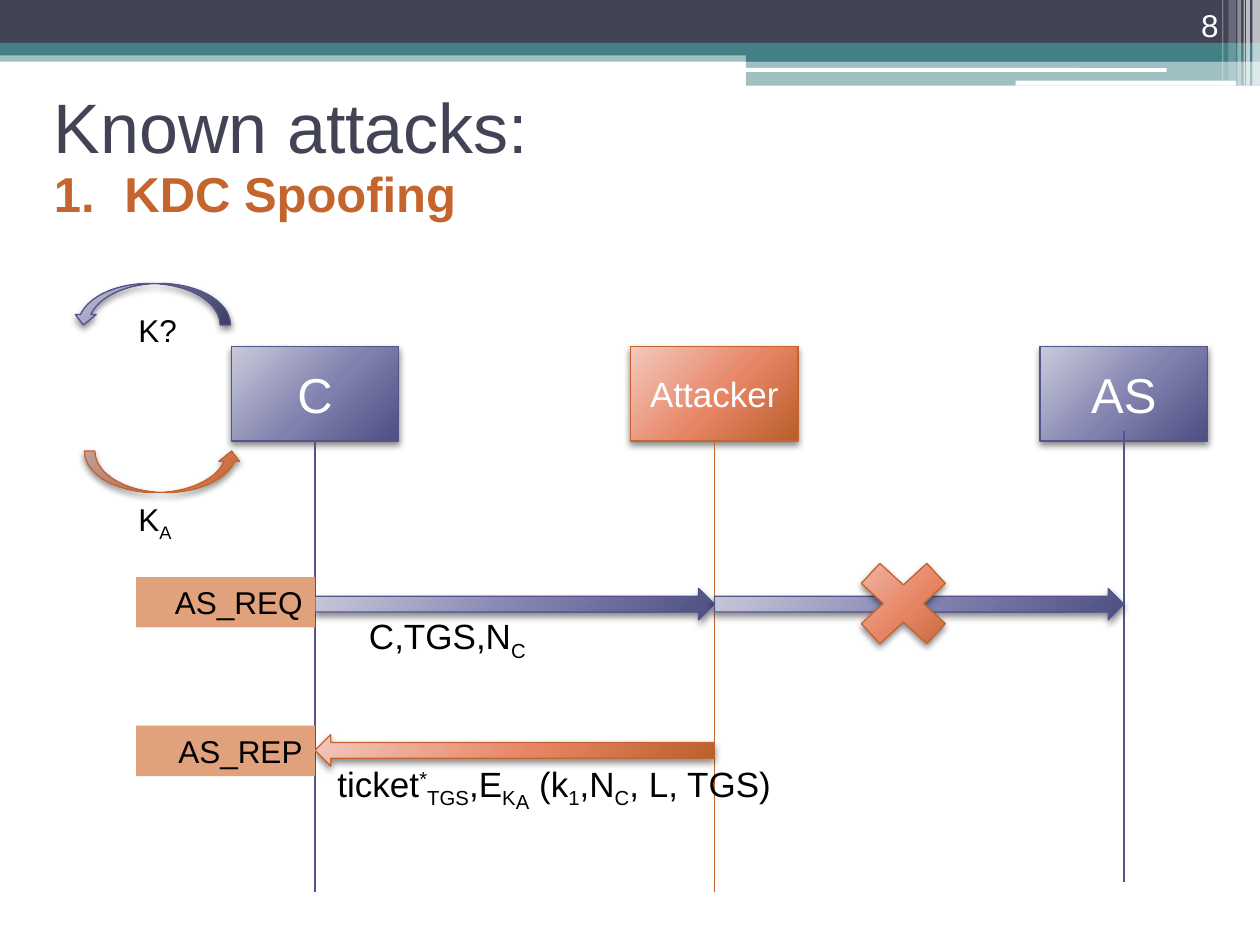
from lxml import etree
from pptx import Presentation
from pptx.dml.color import RGBColor
from pptx.enum.shapes import MSO_CONNECTOR, MSO_SHAPE
from pptx.enum.text import MSO_ANCHOR, PP_ALIGN
from pptx.oxml.ns import qn
from pptx.util import Inches, Pt

RECT, ROUND = MSO_SHAPE.RECTANGLE, MSO_SHAPE.ROUNDED_RECTANGLE
ARROW, CURVED = MSO_SHAPE.RIGHT_ARROW, MSO_SHAPE.CURVED_UP_ARROW
CROSS = MSO_SHAPE.MATH_MULTIPLY
STRAIGHT = MSO_CONNECTOR.STRAIGHT
LEFT, CENTER, RIGHT = PP_ALIGN.LEFT, PP_ALIGN.CENTER, PP_ALIGN.RIGHT
TOP, MIDDLE, BOTTOM = MSO_ANCHOR.TOP, MSO_ANCHOR.MIDDLE, MSO_ANCHOR.BOTTOM

FONT = "Arial"
WHITE = RGBColor(0xFF, 0xFF, 0xFF)
BLACK = RGBColor(0, 0, 0)
DARK = RGBColor(0x42, 0x44, 0x56)
TEAL = RGBColor(0x43, 0x80, 0x86)
ORANGE = RGBColor(0xC4, 0x65, 0x2D)
PURPLE = RGBColor(0x53, 0x54, 0x8A)
PEACH = RGBColor(0xE1, 0xA1, 0x7C)
GRADIENTS = {
    PURPLE: ((0, "C9C9DA"), (55, "7F80AE"), (100, "4D4E81")),
    ORANGE: ((0, "F2C9BF"), (55, "E78463"), (100, "B75E2A")),
}

BANDS = [
    (RECT, 0, 0.4, 10, 0.09, TEAL, 50),
    (RECT, 0, 0, 10, 0.34, DARK, 100),
    (RECT, 0, 0.34, 10, 0.1, TEAL, 100),
    (RECT, 5.92, 0.39, 4.08, 0.1, TEAL, 100),
    (RECT, 5.92, 0.48, 4.08, 0.2, TEAL, 50),
    (ROUND, 5.91, 0.54, 3.35, 0.03, WHITE, 100),
    (ROUND, 8.06, 0.64, 1.75, 0.04, WHITE, 100),
]
STRIPES = [
    (9.94, 0.06, 0.68, 65), (9.89, 0.03, 0.68, 65), (9.87, 0.01, 0.68, 60),
    (9.82, 0.03, 0.68, 40), (9.75, 0.06, 0.64, 20), (9.7, 0.01, 0.64, 30),
]
BOX_W, BOX_H, BOX_Y = 1.33, 0.75, 2.75
LIFE_H = 3.58
ACTORS = [
    ("C", 2.5, 28, PURPLE, 3.5),
    ("Attacker", 5.67, 20, ORANGE, 3.5),
    ("AS", 8.92, 28, PURPLE, 3.42),
]
CLIENT_X, ATTACKER_X, SERVER_X = [a[1] for a in ACTORS]
MESSAGES = [
    (CLIENT_X, ATTACKER_X, 4.67, PURPLE),
    (ATTACKER_X, SERVER_X, 4.67, PURPLE),
    (ATTACKER_X, CLIENT_X, 5.83, ORANGE),
]
LOOPS = [(0.67, 3.58, ORANGE, ""), (0.58, 2.25, PURPLE, "HV")]
LABELS = [("AS_REP", 5.76), ("AS_REQ", 4.58)]
NOTES = [
    (1, 2.42, 0.51, 0.4, 18, False, [("K?", 0)]),
    (1, 3.92, 0.48, 0.4, 18, False, [("K", 0), ("A", -25)]),
    (2.83, 4.83, 2.58, 0.44, 20, True, [("C,TGS,N", 0), ("C", -25)]),
    (2.58, 6, 4.17, 0.44, 20, True, [
        ("ticket", 0), ("*", 30), ("TGS", -25), (",E", 0), ("K", -25),
        ("A", -35), (" (k", 0), ("1", -25), (",N", 0), ("C", -25),
        (", L, TGS)", 0)]),
]

prs = Presentation()
prs.slide_width, prs.slide_height = Inches(10), Inches(7.5)
s = prs.slides.add_slide(prs.slide_layouts[6])


def sub(parent, tag, **attrs):
    el = etree.SubElement(parent, qn(tag))
    for name, value in attrs.items():
        el.set(name, str(value))
    return el


def write(sp, runs, size, color, align=LEFT, anchor=TOP, wrap=True, bold=False):
    tf = sp.text_frame
    tf.word_wrap = wrap
    tf.vertical_anchor = anchor
    p = tf.paragraphs[0]
    p.alignment = align
    for text, base in runs:
        r = p.add_run()
        r.text = text
        r.font.name, r.font.size = FONT, Pt(size)
        r.font.color.rgb, r.font.bold = color, bold
        if base:
            r.font._element.set("baseline", str(base * 1000))
    return p


def add_text(x, y, w, h, runs, size, color, **style):
    sp = s.shapes.add_textbox(Inches(x), Inches(y), Inches(w), Inches(h))
    return write(sp, runs, size, color, **style)


def add_flat(kind, x, y, w, h, color, alpha=100):
    sp = s.shapes.add_shape(kind, Inches(x), Inches(y), Inches(w), Inches(h))
    sp.shadow.inherit = False
    sp.fill.solid()
    sp.fill.fore_color.rgb = color
    sp.line.fill.background()
    if alpha < 100:
        clr = sp._element.spPr.find(qn("a:solidFill"))[0]
        sub(clr, "a:alpha", val=alpha * 1000)
    return sp


def add_glossy(kind, x, y, w, h, color, flip=""):
    sp = s.shapes.add_shape(kind, Inches(x), Inches(y), Inches(w), Inches(h))
    sp.line.color.rgb, sp.line.width = color, Pt(0.75)
    sp.shadow.inherit = False
    spPr = sp._element.spPr
    for axis in flip:
        spPr.find(qn("a:xfrm")).set("flip" + axis, "1")
    grad = sub(spPr, "a:gradFill", rotWithShape=1)
    stops = sub(grad, "a:gsLst")
    for pos, value in GRADIENTS[color]:
        sub(sub(stops, "a:gs", pos=pos * 1000), "a:srgbClr", val=value)
    circle = sub(grad, "a:path", path="circle")
    sub(circle, "a:fillToRect", l=-40000, t=-90000, r=140000, b=190000)
    spPr.find(qn("a:prstGeom")).addnext(grad)
    shadow = sub(spPr.find(qn("a:effectLst")), "a:outerShdw", blurRad=Pt(4),
                 dist=Pt(2), dir=90 * 60000, rotWithShape=0)
    sub(sub(shadow, "a:srgbClr", val="000000"), "a:alpha", val=45000)
    return sp


for band in BANDS:
    add_flat(*band)
for x, w, h, alpha in STRIPES:
    add_flat(RECT, x, 0, w, h, WHITE, alpha)

add_text(0.33, 0.5, 9, 1, [("Known attacks:", 0)], 40, DARK, anchor=MIDDLE)
p = add_text(0.33, 1.25, 3.43, 0.57, [("KDC Spoofing", 0)], 28, ORANGE,
             wrap=False, bold=True)
pPr = p._p.get_or_add_pPr()
pPr.set("marL", str(Inches(0.56)))
pPr.set("indent", str(-Inches(0.56)))
sub(pPr, "a:buFont", typeface=FONT)
sub(pPr, "a:buAutoNum", type="arabicPeriod")
add_text(8.94, 0, 0.83, 0.4, [("8", 0)], 18, WHITE, align=RIGHT, anchor=BOTTOM)

boxes = []
for name, x, size, color, start in ACTORS:
    sp = add_glossy(RECT, x - BOX_W / 2, BOX_Y, BOX_W, BOX_H, color)
    write(sp, [(name, 0)], size, WHITE, align=CENTER, anchor=MIDDLE)
    boxes.append(sp)
for sp, (name, x, size, color, start) in zip(boxes, ACTORS):
    line = s.shapes.add_connector(STRAIGHT, Inches(x), Inches(start),
                                  Inches(x), Inches(start + LIFE_H))
    if start == BOX_Y + BOX_H:
        line.begin_connect(sp, 2)
    line.line.color.rgb, line.line.width = color, Pt(0.75)
    sub(line._element.spPr, "a:effectLst")

for x, y, color, flip in LOOPS:
    add_glossy(CURVED, x, y, 1.25, 0.33, color, flip)
for x1, x2, y, color in MESSAGES:
    add_glossy(ARROW, min(x1, x2), y, abs(x2 - x1), 0.25, color,
               "H" if x2 < x1 else "")
for text, y in LABELS:
    sp = add_flat(RECT, 1.08, y, 1.42, 0.4, PEACH)
    write(sp, [(text, 0)], 18, BLACK, align=RIGHT)
for x, y, w, h, size, wrap, runs in NOTES:
    add_text(x, y, w, h, runs, size, BLACK, wrap=wrap)
add_glossy(CROSS, 6.67, 4.33, 1, 0.92, ORANGE)

prs.save("out.pptx")
